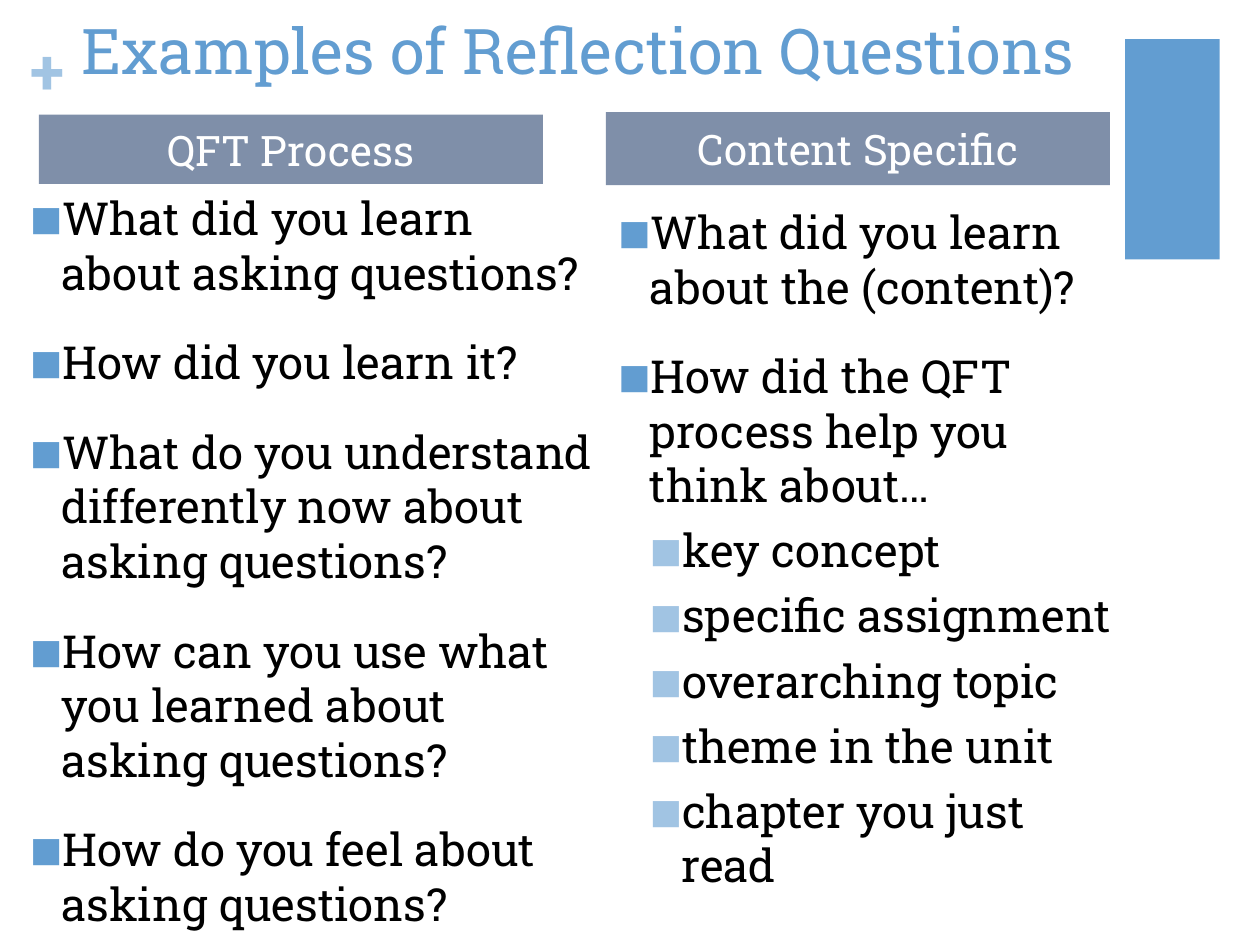
from dataclasses import dataclass

from lxml import etree
from pptx import Presentation
from pptx.dml.color import RGBColor
from pptx.enum.shapes import MSO_SHAPE
from pptx.enum.text import MSO_ANCHOR, PP_ALIGN
from pptx.oxml.ns import qn
from pptx.util import Inches, Pt

RECTANGLE = MSO_SHAPE.RECTANGLE
MIDDLE = MSO_ANCHOR.MIDDLE
CENTER = PP_ALIGN.CENTER


@dataclass(frozen=True)
class Theme:
    font: str = "Roboto Slab"
    accent: str = "629DD1"
    light_accent: str = "A1C4E3"
    heading_fill: str = "7F8FA9"
    heading_text: str = "FFFFFF"
    body_text: str = "000000"
    title_size: int = 36
    heading_size: int = 24
    body_size: int = 26
    level_colors: tuple = ("629DD1", "A1C4E3")
    level_spacing: tuple = (20, 6)


THEME = Theme()
INDENT = 0.25

PROCESS_QUESTIONS = [
    ("What did you learn about asking questions?", 0),
    ("How did you learn it?", 0),
    ("What do you understand differently now about asking questions?", 0),
    ("How can you use what you learned about asking questions?", 0),
    ("How do you feel about asking questions?", 0),
]
CONTENT_QUESTIONS = [
    ("What did you learn about the (content)?", 0),
    ("How did the QFT process help you think about…", 0),
    ("key concept", 1),
    ("specific assignment", 1),
    ("overarching topic", 1),
    ("theme in the unit", 1),
    ("chapter you just read", 1),
]


def style(paragraph, size, color, bold=False):
    font = paragraph.font
    font.name = THEME.font
    font.size = Pt(size)
    font.bold = bold
    font.color.rgb = RGBColor.from_string(color)


def add_block(slide, box, color):
    block = slide.shapes.add_shape(RECTANGLE, *map(Inches, box))
    block.shadow.inherit = False
    block.fill.solid()
    block.fill.fore_color.rgb = RGBColor.from_string(color)
    block.line.fill.background()
    return block


def add_heading(slide, box, text):
    frame = add_block(slide, box, THEME.heading_fill).text_frame
    frame.margin_top = frame.margin_bottom = 0
    frame.vertical_anchor = MIDDLE
    frame.word_wrap = True
    label = frame.paragraphs[0]
    label.text = text
    label.alignment = CENTER
    style(label, THEME.heading_size, THEME.heading_text)


def add_text(slide, box, text, color, bold=False):
    frame = slide.shapes.add_textbox(*map(Inches, box)).text_frame
    line = frame.paragraphs[0]
    line.text = text
    style(line, THEME.title_size, color, bold)
    return frame


def add_bullet(paragraph, level):
    properties = paragraph._p.get_or_add_pPr()
    properties.set("marL", str(Inches(INDENT * (level + 1))))
    properties.set("indent", str(Inches(-INDENT)))
    bullet_color = etree.SubElement(properties, qn("a:buClr"))
    etree.SubElement(bullet_color, qn("a:srgbClr"), val=THEME.level_colors[level])
    etree.SubElement(properties, qn("a:buSzPct"), val="75000")
    etree.SubElement(properties, qn("a:buFont"), typeface=THEME.font)
    etree.SubElement(properties, qn("a:buChar"), char="■")


def add_questions(slide, box, questions):
    frame = slide.shapes.add_textbox(*map(Inches, box)).text_frame
    frame.word_wrap = True
    for index, (text, level) in enumerate(questions):
        question = frame.add_paragraph() if index else frame.paragraphs[0]
        question.text = text
        question.level = level
        question.space_before = Pt(THEME.level_spacing[level])
        add_bullet(question, level)
        style(question, THEME.body_size, THEME.body_text)


def main():
    deck = Presentation()
    deck.slide_width, deck.slide_height = Inches(10), Inches(7.5)
    slide = deck.slides.add_slide(deck.slide_layouts[6])

    add_block(slide, (8.93, 0.31, 0.75, 1.75), THEME.accent)
    plus = add_text(slide, (0.24, 0.25, 0.28, 0.61), "+", THEME.light_accent, bold=True)
    plus.margin_left = plus.margin_right = plus.margin_top = plus.margin_bottom = 0
    title = add_text(slide, (0.55, 0.01, 8.26, 0.77), "Examples of Reflection Questions", THEME.accent)
    title.word_wrap = True
    title.vertical_anchor = MIDDLE

    add_questions(slide, (0.14, 1.46, 4.67, 5.75), PROCESS_QUESTIONS)
    add_questions(slide, (4.81, 1.57, 4.18, 5.24), CONTENT_QUESTIONS)
    add_heading(slide, (0.31, 0.91, 4, 0.55), "QFT Process")
    add_heading(slide, (4.81, 0.89, 4, 0.58), "Content Specific")

    deck.save("out.pptx")


if __name__ == "__main__":
    main()
